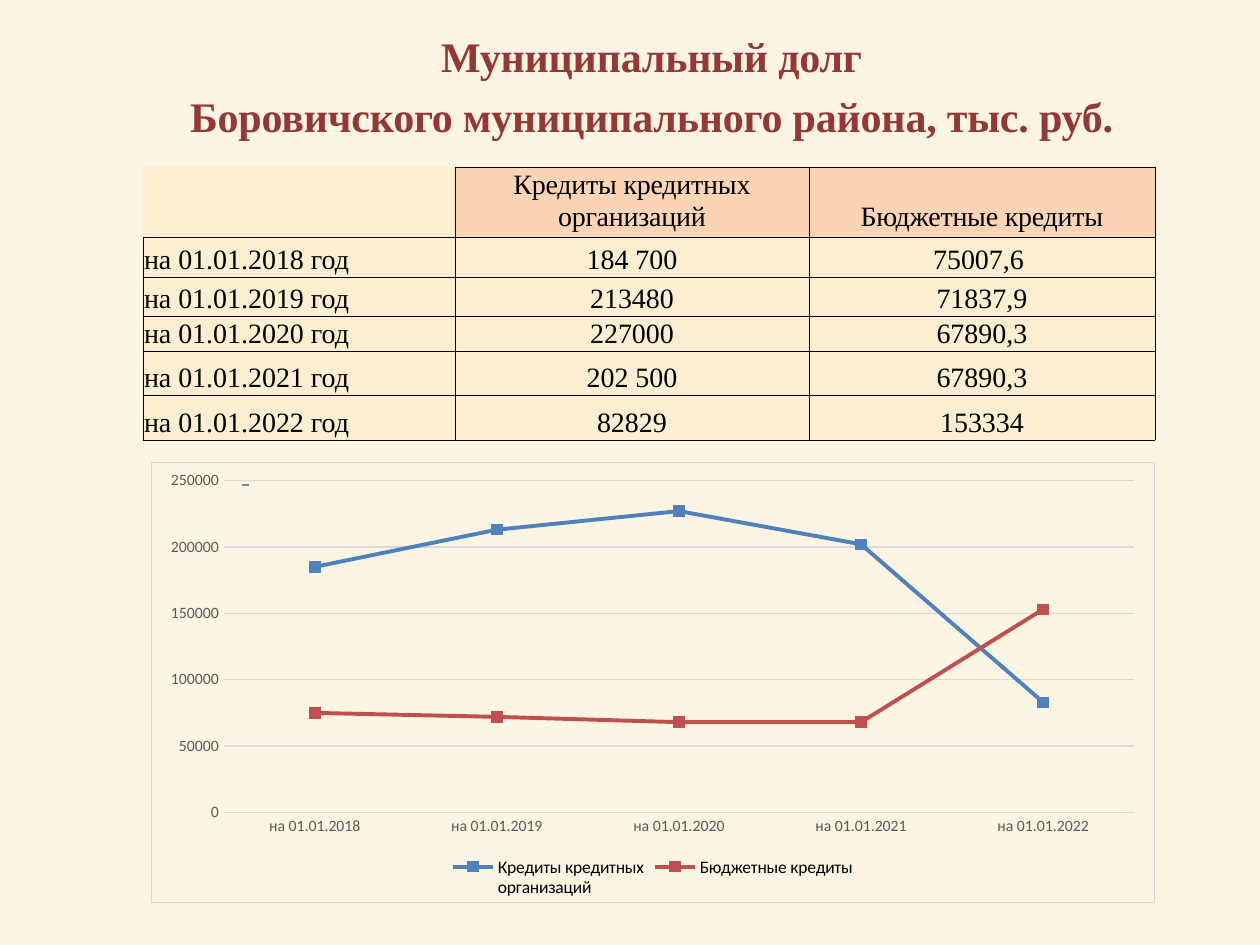
from lxml import etree
from pptx import Presentation
from pptx.chart.data import CategoryChartData
from pptx.dml.color import RGBColor
from pptx.enum.chart import XL_CHART_TYPE, XL_LEGEND_POSITION, XL_MARKER_STYLE, XL_TICK_MARK
from pptx.enum.shapes import MSO_CONNECTOR, MSO_SHAPE
from pptx.enum.text import MSO_ANCHOR, PP_ALIGN
from pptx.oxml import parse_xml
from pptx.oxml.ns import nsdecls, qn
from pptx.util import Pt

LEFT, CENTER = PP_ALIGN.LEFT, PP_ALIGN.CENTER
BOTTOM = MSO_ANCHOR.BOTTOM
RECTANGLE = MSO_SHAPE.RECTANGLE
LINE_MARKERS = XL_CHART_TYPE.LINE_MARKERS
LEGEND_BOTTOM = XL_LEGEND_POSITION.BOTTOM
SQUARE = XL_MARKER_STYLE.SQUARE
NO_TICK = XL_TICK_MARK.NONE
STRAIGHT = MSO_CONNECTOR.STRAIGHT

COLORS = {
    "cream": "FBE2AA", "header": "FBD4B5", "title": "943735", "text": "000000",
    "axis": "595959", "grid": "D9D9D9", "dash": "858585",
    "bank": "4F81BD", "budget": "C0504D",
}
SERIF, SANS = "Times New Roman", "Calibri"
HEADERS = ["Кредиты кредитных\nорганизаций", "Бюджетные кредиты"]
DEBT = [
    ("на 01.01.2018", "184 700", "75007,6 "),
    ("на 01.01.2019", "213480", "71837,9"),
    ("на 01.01.2020", "227000", "67890,3"),
    ("на 01.01.2021", "202 500", "67890,3"),
    ("на 01.01.2022", "82829", "153334"),
]
COL_WIDTHS = [312, 354, 346]
ROW_HEIGHTS = [70, 40, 39, 35, 44, 45]


def px(n):
    """Convert pixels to EMU."""
    return round(n * 914400 / 126)


def rgb(name):
    """Return a palette colour."""
    return RGBColor.from_string(COLORS[name])


def thousands(text):
    """Return the number in a text, rounded to thousands."""
    return round(float(text.replace(" ", "").replace(",", ".")) / 1000) * 1000


def paint(fill, color, alpha=100):
    """Set a solid fill with an opacity in percent."""
    fill.solid()
    fill.fore_color.rgb = rgb(color)
    if alpha < 100:
        clr = fill._xPr.find(qn("a:solidFill")).find(qn("a:srgbClr"))
        etree.SubElement(clr, qn("a:alpha")).set("val", str(alpha * 1000))


def write(tf, text, size=16, color="text", bold=False, align=CENTER, spacing=Pt(18.6), spc=0):
    """Fill a text frame with one paragraph per line of text."""
    tf.word_wrap = True
    for i, line in enumerate(text.split("\n")):
        p = tf.add_paragraph() if i else tf.paragraphs[0]
        p.alignment, p.line_spacing = align, spacing
        r = p.add_run()
        r.text = line
        r.font.name, r.font.size, r.font.bold = SERIF, Pt(size), bold
        r.font.color.rgb = rgb(color)
        r.font._element.set("spc", str(spc))


def add_backdrop(s, x, y, w, h):
    """Place the cream tint behind everything."""
    sp = s.shapes.add_shape(RECTANGLE, px(x), px(y), px(w), px(h))
    sp.shadow.inherit = False
    sp.line.fill.background()
    paint(sp.fill, "cream", 32)


def add_title(s, x, y, w, h):
    """Place the two-line title."""
    tf = s.shapes.add_textbox(px(x), px(y), px(w), px(h)).text_frame
    tf.margin_left = tf.margin_right = tf.margin_top = tf.margin_bottom = 0
    write(tf, "Муниципальный долг\nБоровичского муниципального района, тыс. руб.",
          size=24, color="title", bold=True, spacing=1.2, spc=-10)


def border(cell, hidden=()):
    """Draw the four borders of a cell except the hidden ones."""
    for i, side in enumerate("LRTB"):
        fill = ("<a:noFill/>" if side in hidden else
                f'<a:solidFill><a:srgbClr val="{COLORS["text"]}"/></a:solidFill>')
        ln = parse_xml(f'<a:ln{side} {nsdecls("a")} w="6350">{fill}</a:ln{side}>')
        cell._tc.get_or_add_tcPr().insert(i, ln)


def style_cell(cell, color, alpha=100, hidden=(), left=0, bottom=1):
    """Set margins, fill and borders of a cell."""
    cell.margin_right = cell.margin_top = 0
    cell.margin_left, cell.margin_bottom = px(left), px(bottom)
    cell.vertical_anchor = BOTTOM
    paint(cell.fill, color, alpha)
    border(cell, hidden)


def add_debt_table(s, x, y, w, h):
    """Place the table of debt by date and kind of credit."""
    table = s.shapes.add_table(len(ROW_HEIGHTS), len(COL_WIDTHS), px(x), px(y), px(w), px(h)).table
    table.first_row = table.horz_banding = False
    for col, width in zip(table.columns, COL_WIDTHS):
        col.width = px(width)
    for row, height in zip(table.rows, ROW_HEIGHTS):
        row.height = px(height)
    style_cell(table.cell(0, 0), "cream", alpha=32, hidden="LT")
    for c, text in enumerate(HEADERS, 1):
        cell = table.cell(0, c)
        write(cell.text_frame, text, spc=-10)
        style_cell(cell, "header", bottom=4)
    for r, (date, *values) in enumerate(DEBT, 1):
        for c, text in enumerate([f"{date} год", *values]):
            cell = table.cell(r, c)
            write(cell.text_frame, text, align=CENTER if c else LEFT)
            style_cell(cell, "cream", alpha=32, left=0 if c else 1)


def add_dash(s, x, y, w):
    """Place the short grey line."""
    cn = s.shapes.add_connector(STRAIGHT, px(x), px(y), px(x + w), px(y))
    style_line(cn.line, "dash", 0.72)
    etree.SubElement(cn._element.spPr, qn("a:effectLst"))


def layout(x, y, w, h, inner=False):
    """Build a manual chart layout from fractions of the chart."""
    target = '<c:layoutTarget val="inner"/>' if inner else ""
    parts = "".join(f'<c:{k} val="{v:.3f}"/>' for k, v in zip("xywh", (x, y, w, h)))
    modes = '<c:xMode val="edge"/><c:yMode val="edge"/>'
    return parse_xml(f'<c:layout {nsdecls("c")}><c:manualLayout>{target}{modes}{parts}'
                     '</c:manualLayout></c:layout>')


def style_line(line, color, width):
    """Set colour and width of a line."""
    line.color.rgb = rgb(color)
    line.width = Pt(width)


def style_axis(axis):
    """Set tick marks and labels of an axis."""
    axis.major_tick_mark = axis.minor_tick_mark = NO_TICK
    font = axis.tick_labels.font
    font.size, font.name, font.color.rgb = Pt(9), SANS, rgb("axis")


def add_debt_chart(s, x, y, w, h):
    """Place the line chart of both kinds of credit."""
    data = CategoryChartData(number_format="0")
    data.categories = [row[0] for row in DEBT]
    for c, name in enumerate(HEADERS, 1):
        data.add_series(name, [thousands(row[c]) for row in DEBT])
    chart = s.shapes.add_chart(LINE_MARKERS, px(x), px(y), px(w), px(h), data).chart
    chart.has_title = False
    chart.font.size, chart.font.name, chart.font.color.rgb = Pt(10), SANS, rgb("text")
    for series, color in zip(chart.plots[0].series, ("bank", "budget")):
        series.smooth = False
        style_line(series.format.line, color, 2.25)
        series.marker.style, series.marker.size = SQUARE, 6
        paint(series.marker.format.fill, color)
        style_line(series.marker.format.line, color, 0.75)
    chart.plots[0].vary_by_categories = False
    cat, val = chart.category_axis, chart.value_axis
    style_axis(cat)
    style_line(cat.format.line, "grid", 0.75)
    style_axis(val)
    val.format.line.fill.background()
    val.minimum_scale, val.maximum_scale, val.major_unit = 0, 250000, 50000
    style_line(val.major_gridlines.format.line, "grid", 0.75)
    val.tick_labels.number_format, val.tick_labels.number_format_is_linked = "0", False
    chart.has_legend = True
    chart.legend.position, chart.legend.include_in_layout = LEGEND_BOTTOM, False
    legend = chart.legend._element
    legend.find(qn("c:legendPos")).addnext(layout(298 / w, 393 / h, 408 / w, 44 / h))
    area = chart._chartSpace.chart.plotArea
    for old in area.findall(qn("c:layout")):
        area.remove(old)
    area.insert(0, layout(72 / w, 18 / h, 912 / w, 333 / h, inner=True))
    frame = parse_xml(f'<c:spPr {nsdecls("c", "a")}><a:noFill/><a:ln w="9525"><a:solidFill>'
                      f'<a:srgbClr val="{COLORS["grid"]}"/></a:solidFill></a:ln></c:spPr>')
    chart._chartSpace.find(qn("c:txPr")).addprevious(frame)


def main():
    """Build and save the slide."""
    prs = Presentation()
    prs.slide_width, prs.slide_height = px(1260), px(945)
    s = prs.slides.add_slide(prs.slide_layouts[6])
    add_backdrop(s, 0, 0, 1260, 945)
    add_title(s, 184, 20, 935, 125)
    add_debt_table(s, 143, 167, sum(COL_WIDTHS), sum(ROW_HEIGHTS))
    add_dash(s, 242, 485, 7)
    add_debt_chart(s, 151, 462, 1004, 441)
    prs.save("out.pptx")


if __name__ == "__main__":
    main()
